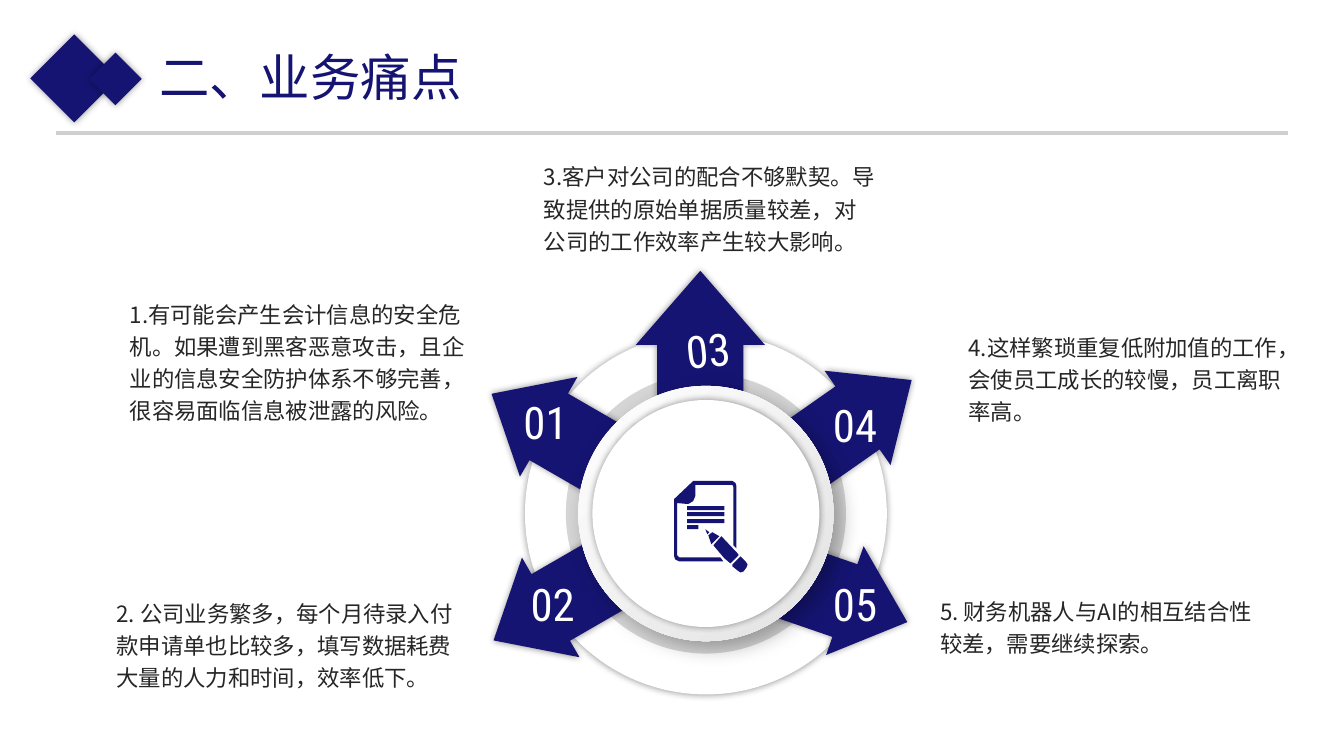
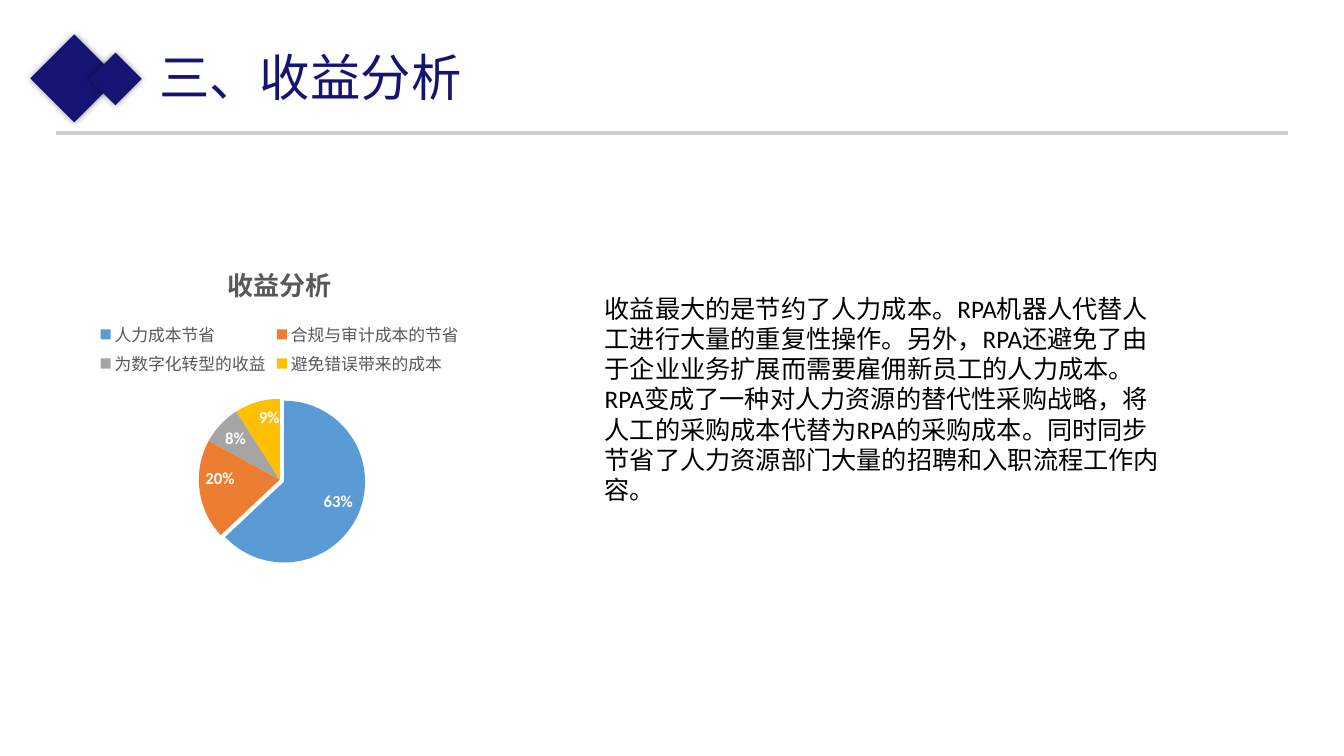
import dataclasses

import lxml.etree
import pptx
import pptx.chart.data
import pptx.dml.color
import pptx.enum.chart
import pptx.enum.shapes
import pptx.enum.text
import pptx.oxml.ns
import pptx.util

Cm = pptx.util.Cm
Pt = pptx.util.Pt
SHAPES = pptx.enum.shapes.MSO_SHAPE


@dataclasses.dataclass(frozen=True)
class Theme:
    """Colours, fonts and type sizes of the presentation."""

    navy: str = "151472"
    rule: str = "D0CECE"
    white: str = "FFFFFF"
    pearl: str = "E2E2E2"
    shade: str = "404040"
    ink: str = "262626"
    black: str = "000000"
    chart_text: str = "595959"
    slices: tuple = ("5B9BD5", "ED7D31", "A5A5A5", "FFC000")
    title_font: str = "Noto Sans CJK JP"
    body_font: str = "Noto Sans CJK SC"
    number_font: str = "Roboto Condensed"
    latin_font: str = "Calibri"
    title_size: float = 36
    number_size: float = 32
    note_size: float = 16
    summary_size: float = 18
    chart_title_size: float = 18.6
    chart_size: float = 12


THEME = Theme()

NOTES = [
    ((3.02, 7.32, 9.14, 3.53), "1.有可能会产生会计信息的安全危机。如果遭到黑客恶意攻击，且企业的信息安全防护体系不够完善，很容易面临信息被泄露的风险。"),
    ((2.69, 14.86, 9.14, 2.64), "2. 公司业务繁多，每个月待录入付款申请单也比较多，填写数据耗费大量的人力和时间，效率低下。"),
    ((13.46, 3.86, 8.92, 2.64), "3.客户对公司的配合不够默契。导致提供的原始单据质量较差，对公司的工作效率产生较大影响。"),
    ((24.16, 8.15, 8.92, 2.64), "4.这样繁琐重复低附加值的工作，会使员工成长的较慢，员工离职率高。"),
    ((23.44, 14.81, 8.92, 1.83), "5. 财务机器人与AI的相互结合性较差，需要继续探索。"),
]

ARROWS = [
    ("03", (-0.14, -3.23), (3.25, 5.77), 0, (0.05, -4.19), 354),
    ("04", (2.78, -1.68), (2.9, 5.87), 55, (3.76, -2.29), 0),
    ("05", (2.3, 1.78), (2.9, 5.87), 109, (3.76, 2.21), 0),
    ("02", (-2.81, 1.73), (2.9, 5.87), 240, (-3.86, 2.21), 0),
    ("01", (-2.86, -1.55), (2.9, 5.87), 300, (-4.04, -2.36), 0),
]

TEXT_BARS = [(25, 50), (31, 50), (38, 50), (44, 24)]
ICON_WIDTH = 73
ICON_OUTLINES = [
    [(3, 22), (14, 23), (19, 20), (21, 15), (21, 4), (58, 4), (59, 6), (59, 64), (62, 67),
     (62, 5), (61, 2), (58, 0), (19, 0), (0, 18), (0, 75), (1, 78), (5, 80), (49, 80),
     (46, 76), (5, 76), (3, 74)],
    [(33, 53), (35, 51), (31, 48)],
    [(37, 63), (45, 55), (38, 51), (34, 54)],
    [(39, 64), (47, 55), (64, 73), (64, 74), (56, 82), (50, 77)],
    [(58, 83), (58, 85), (63, 89), (66, 91), (69, 90), (72, 86), (73, 83), (71, 80), (66, 75)],
] + [[(13, top), (right, top), (right, top + 4), (13, top + 4)] for top, right in TEXT_BARS]

SUMMARY = (
    "收益最大的是节约了人力成本。RPA机器人代替人工进行大量的重复性操作。"
    "另外，RPA还避免了由于企业业务扩展而需要雇佣新员工的人力成本。"
    "RPA变成了一种对人力资源的替代性采购战略，将人工的采购成本代替为RPA的采购成本。"
    "同时同步节省了人力资源部门大量的招聘和入职流程工作内容。"
)
BENEFITS = {"人力成本节省": 63, "合规与审计成本的节省": 20, "为数字化转型的收益": 8, "避免错误带来的成本": 9}


def rgb(color):
    """Return a colour object for a hexadecimal string."""
    return pptx.dml.color.RGBColor.from_string(color)


def centred(centre, width, height):
    """Return the box of the given size around a centre."""
    return centre[0] - width / 2, centre[1] - height / 2, width, height


def add_child(parent, tag, **attributes):
    """Append a drawing element with attributes and return it."""
    return lxml.etree.SubElement(parent, pptx.oxml.ns.qn(tag), attributes)


def add_shadow(shape, opacity=40, blur=5, distance=0, angle=0):
    """Give a shape a soft black outer shadow."""
    effects = shape._element.spPr.find(pptx.oxml.ns.qn("a:effectLst"))
    shadow = add_child(effects, "a:outerShdw", blurRad=str(Pt(blur)), dist=str(Pt(distance)),
                       dir=str(angle * 60000), algn="ctr", rotWithShape="0")
    color = add_child(shadow, "a:srgbClr", val=THEME.black)
    add_child(color, "a:alpha", val=str(opacity * 1000))


def finish_shape(shape, color):
    """Apply a flat fill without line or shadow."""
    shape.shadow.inherit = False
    shape.fill.solid()
    shape.fill.fore_color.rgb = rgb(color)
    shape.line.fill.background()


def add_preset(slide, kind, box, color, rotation=0, adjustments=()):
    """Add a flat preset shape in a box."""
    shape = slide.shapes.add_shape(kind, *map(Cm, box))
    finish_shape(shape, color)
    shape.rotation = rotation
    for index, value in enumerate(adjustments):
        shape.adjustments[index] = value
    return shape


def add_text(slide, box, text, size, color, font, east_asian=True):
    """Add a wrapped text box and return its shape."""
    shape = slide.shapes.add_textbox(*map(Cm, box))
    frame = shape.text_frame
    frame.word_wrap = True
    frame.auto_size = pptx.enum.text.MSO_AUTO_SIZE.SHAPE_TO_FIT_TEXT
    run = frame.paragraphs[0].add_run()
    run.text = text
    run.font.size = Pt(size)
    run.font.name = font
    run.font.color.rgb = rgb(color)
    properties = run._r.get_or_add_rPr()
    properties.set("lang", "zh-CN")
    if east_asian:
        add_child(properties, "a:ea", typeface=font)
    return shape


def add_header(slide, box, title):
    """Draw the diamonds, the title and the rule below them."""
    left, top, width, height = box
    for x, y, side in ((0, 0.15, 1.57), (1.35, 0.48, 0.94)):
        diamond = add_preset(slide, SHAPES.RECTANGLE, (left + x, top + y, side, side), THEME.navy, 315)
        add_shadow(diamond)
    add_text(slide, (left + 2.67, top, 15.77, 1.8), title,
             THEME.title_size, THEME.navy, THEME.title_font)
    rule = slide.shapes.add_connector(
        pptx.enum.shapes.MSO_CONNECTOR.STRAIGHT,
        Cm(left + 0.31), Cm(top + height), Cm(left + width), Cm(top + height))
    rule.line.color.rgb = rgb(THEME.rule)
    rule.line.width = Pt(2.25)
    add_child(rule._element.spPr, "a:effectLst")


def add_icon(slide, box):
    """Draw the page and pencil."""
    left, top, width = box
    builder = slide.shapes.build_freeform(*ICON_OUTLINES[0][0], scale=Cm(width) / ICON_WIDTH)
    for index, outline in enumerate(ICON_OUTLINES):
        if index:
            builder.move_to(*outline[0])
        builder.add_line_segments(outline[1:], close=True)
    finish_shape(builder.convert_to_shape(Cm(left), Cm(top)), THEME.navy)


def add_wheel(slide, box):
    """Draw the ring, the numbered arrows and the hub with its icon."""
    left, top, size = box
    centre = left + size / 2, top + size / 2

    def around(offset, width, height):
        """Return a box placed by its offset from the hub."""
        return centred((centre[0] + offset[0], centre[1] + offset[1]), width, height)

    add_shadow(add_preset(slide, SHAPES.OVAL, (left, top, size, size), THEME.white))
    donut = add_preset(slide, SHAPES.DONUT, centred(centre, 7.06, 7.06), THEME.shade, 0, (0.088,))
    color = donut._element.spPr.find(".//" + pptx.oxml.ns.qn("a:srgbClr"))
    add_child(color, "a:alpha", val="21000")
    for _, offset, extent, rotation, _, _ in ARROWS:
        arrow = add_preset(slide, SHAPES.UP_ARROW, around(offset, *extent),
                           THEME.navy, rotation, (0.668, 0.574))
        add_shadow(arrow)
    rim = add_preset(slide, SHAPES.OVAL, centred(centre, 6.43, 6.43), THEME.white)
    rim.fill.gradient()
    rim.fill.gradient_angle = 315
    for stop, color in zip(rim.fill.gradient_stops, (THEME.white, THEME.pearl)):
        stop.color.rgb = rgb(color)
    add_shadow(rim, 30, 15, 7, 45)
    add_shadow(add_preset(slide, SHAPES.OVAL, centred(centre, 5.72, 5.72), THEME.white))
    for number, _, _, _, offset, rotation in ARROWS:
        label = add_text(slide, around(offset, 2.31, 1.5), number,
                         THEME.number_size, THEME.white, THEME.number_font)
        label.text_frame.paragraphs[0].alignment = pptx.enum.text.PP_ALIGN.CENTER
        label.rotation = rotation
    add_icon(slide, (centre[0] - 0.8, centre[1] - 0.82, 1.85))


def add_note(slide, box, text):
    """Add one numbered explanation."""
    shape = add_text(slide, box, text, THEME.note_size, THEME.ink, THEME.body_font)
    paragraph = shape.text_frame.paragraphs[0]
    paragraph.line_spacing = 1.2
    paragraph.space_before = Pt(3.2)


def style_font(font, size, color, bold=False):
    """Set the font of a chart part."""
    font.name = THEME.latin_font
    font.size = Pt(size)
    font.bold = bold
    font.color.rgb = rgb(color)


def add_benefit_chart(slide, box):
    """Add the pie chart of benefits."""
    data = pptx.chart.data.CategoryChartData()
    data.categories = list(BENEFITS)
    data.add_series("收益分析", list(BENEFITS.values()))
    chart = slide.shapes.add_chart(pptx.enum.chart.XL_CHART_TYPE.PIE, *map(Cm, box), data).chart
    style_font(chart.font, 10, THEME.black)
    chart.has_title = True
    run = chart.chart_title.text_frame.paragraphs[0].add_run()
    run.text = "收益分析"
    style_font(run.font, THEME.chart_title_size, THEME.chart_text, True)
    chart.has_legend = True
    chart.legend.position = pptx.enum.chart.XL_LEGEND_POSITION.TOP
    chart.legend.include_in_layout = False
    style_font(chart.legend.font, THEME.chart_size, THEME.chart_text)
    plot = chart.plots[0]
    plot.vary_by_categories = True
    for index, color in enumerate(THEME.slices):
        fill = plot.series[0].points[index].format.fill
        fill.solid()
        fill.fore_color.rgb = rgb(color)
    first_point = plot.series[0]._element.find(pptx.oxml.ns.qn("c:dPt"))
    explosion = lxml.etree.Element(pptx.oxml.ns.qn("c:explosion"), val="6")
    first_point.find(pptx.oxml.ns.qn("c:spPr")).addprevious(explosion)
    plot.has_data_labels = True
    labels = plot.data_labels
    labels.show_percentage = True
    labels.show_value = False
    labels.number_format = "0%"
    labels.number_format_is_linked = False
    labels.position = pptx.enum.chart.XL_LABEL_POSITION.INSIDE_END
    style_font(labels.font, THEME.chart_size, THEME.white, True)


def add_slide(presentation, title):
    """Add a blank slide with the shared header."""
    slide = presentation.slides.add_slide(presentation.slide_layouts[6])
    add_header(slide, (1.09, 1.04, 31.37, 2.31), title)
    return slide


def add_pain_points(presentation):
    """Build the slide of business pain points."""
    slide = add_slide(presentation, "二、业务痛点")
    add_wheel(slide, (13.23, 8.38, 9.12))
    for box, text in NOTES:
        add_note(slide, box, text)


def add_benefits(presentation):
    """Build the slide of benefits."""
    slide = add_slide(presentation, "三、收益分析")
    add_benefit_chart(slide, (0, 6.17, 14.1, 8.43))
    add_text(slide, (14.99, 7.26, 14.68, 5.64), SUMMARY,
             THEME.summary_size, THEME.black, THEME.latin_font, east_asian=False)


def main():
    """Build and save the presentation."""
    presentation = pptx.Presentation()
    presentation.slide_width = Cm(33.87)
    presentation.slide_height = Cm(19.05)
    add_pain_points(presentation)
    add_benefits(presentation)
    presentation.save("out.pptx")


if __name__ == "__main__":
    main()
